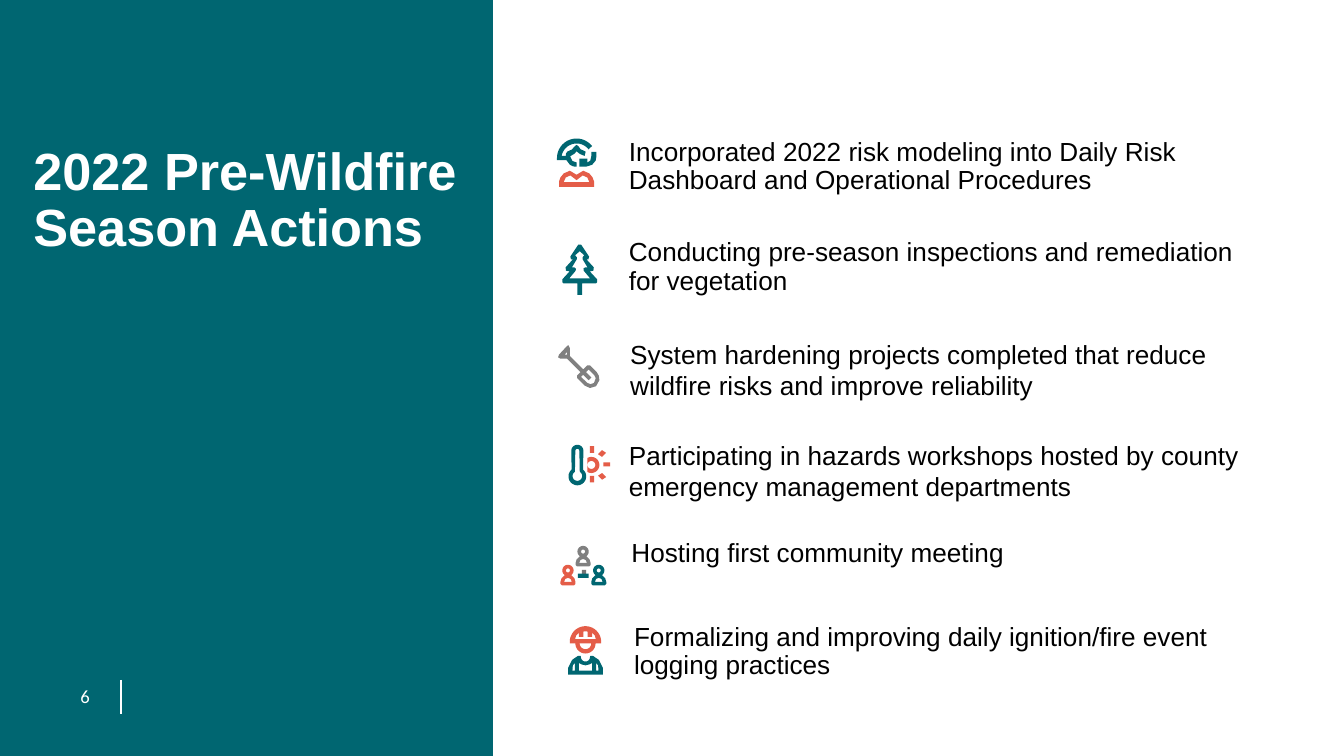
from math import cos, radians, sin

from lxml.etree import SubElement
from pptx import Presentation
from pptx.dml.color import RGBColor as RGB
from pptx.enum.shapes import MSO_CONNECTOR as LINE, MSO_SHAPE as KIND
from pptx.oxml.ns import qn
from pptx.util import Pt

HUES = {
    "teal": "006671", "coral": "E45D48", "gray": "808080",
    "stone": "767576", "white": "FFFFFF", "black": "000000",
}
UNIT = 0.72

TITLE = ("2022 Pre-Wildfire Season Actions", 10.8, 74.2, 257.8, 146.2, 0.9)
PAGE = ("6", 36, 363.6, 30.2, 19.4, 1)
ACTIONS = [
    ("Incorporated 2022 risk modeling into Daily Risk Dashboard and Operational Procedures",
     329.8, 70.6, 370, 46.8, 0.9),
    ("Conducting pre-season inspections and remediation for vegetation",
     329.8, 124.6, 344.2, 44.6, 0.9),
    ("System hardening projects completed that reduce wildfire risks and improve reliability",
     330.5, 177.8, 363.6, 41, 1),
    ("Participating in hazards workshops hosted by county emergency management departments",
     329.8, 231.8, 383.8, 41, 1),
    ("Hosting first community meeting", 331.2, 283.7, 383.8, 23.8, 1),
    ("Formalizing and improving daily ignition/fire event logging practices",
     332.6, 330.5, 357.8, 39.6, 0.9),
]


def arc(x, y, r, start, end, steps=16):
    turns = [radians(start + (end - start) * i / steps) for i in range(steps + 1)]
    return [(x + r * cos(t), y + r * sin(t)) for t in turns]


def flip(half):
    return [(-x, y) for x, y in reversed(half)]


def both(half):
    return half + flip(half)


HAIR = [
    [(0, 21), (0, 17.8), (-3, 16.8), (-4.8, 13.3), (-1.5, 11.3), (0, 9.5),
     (2.4, 11.5), (6, 13), (6.8, 9.8), (3, 8), (1.3, 5.6), (0, 4.8),
     (-1.2, 5.6), (-3.5, 8.2), (-7, 9.8), (-8, 11.5), (-8, 13), (-11, 13)]
    + arc(0, 15, 11.3, 190, 322) + arc(0, 14.6, 14.6, -38, -180)
    + [(-14.6, 16), (-7.6, 16), (-5, 19.5), (-2.5, 20.8)],
]
PHONE = [
    [(11, 10), (11, 13), (10.2, 16.4), (8, 18), (8, 15), (2, 15), (2, 21),
     (7, 21), (11.5, 19.6), (14.2, 16.5), (14.8, 13), (14.8, 10)],
]
BUST = [
    both([(0, 27), (5, 24), (9.5, 26), (12, 29), (13, 32), (13, 36)]),
    both([(0, 31), (4.6, 27.5), (8, 29), (9.6, 32.5)]),
]
TREE = [
    both([(1, 0), (7, 9), (6.5, 11), (5, 11), (10.5, 17), (10.2, 19.5),
          (7.5, 20), (13, 26), (13, 28), (12, 29), (1.8, 29), (1.8, 37.5)]),
    both([(0, 5), (3.4, 8), (2.2, 9.5), (2.2, 11), (5.8, 17), (4, 17),
          (2.8, 18), (3, 19.5), (7.8, 25.2)]),
]
SPADE = [
    [(29, 20), (24, 15), (22, 15), (19, 18), (9, 8), (9, 2), (8, 0), (7, 0.5),
     (1, 7), (0.3, 9), (2, 10), (7, 10), (17, 20), (14.5, 22.5), (14.5, 24.5),
     (20, 30), (24, 31.8), (28.5, 30.5), (31, 26), (30.5, 22.5)],
    [(7, 7), (5, 7), (7, 5)],
    [(27, 28), (24.5, 29), (22, 28), (17.3, 23.5), (19, 22), (23, 26),
     (25, 24), (21, 20), (23, 18), (27, 22), (28.3, 24.5)],
]
GAUGE = [
    both(arc(0, 4.5, 4.5, -90, 0) + arc(0, 23.5, 6.6, -50, 90)),
    both(arc(0, 4.5, 1.5, -90, 0) + arc(0, 23.2, 3.6, -60, 90)),
]
SUN = [arc(0, 0, 6, -120, 120) + arc(0, 0, 3, 180, -180)]
RAY = [(11, -9), (8, -11), (5, -8), (8, -6)]
LOW = [(x, -y) for x, y in RAY]
HEAD = [
    both(arc(0, 4.5, 4.2, -90, 50)
         + [(2.4, 8), (4.8, 10.3), (5.6, 13), (5.6, 14.5), (4.6, 15.5)]),
    both(arc(0, 4.5, 1.5, -90, 90)),
    both([(0, 10), (2, 10.8), (2.9, 13)]),
]
HAT = [
    both(arc(0, 11.7, 11.7, -90, 0) + [(11.7, 12.8)] + arc(0, 12.8, 7.5, 0, 90)),
    both(arc(0, 12.8, 4.3, 0, 90)),
    both([(0, 3.8), (1.6, 4), (1.6, 8), (4.9, 8), (4.9, 4.8), (7, 7), (7.7, 9.6)]),
]
SLEEVE = [(7.9, 5.2), (9.4, 7), (9.7, 11), (7.9, 11)]
COAT = [
    both(arc(0, 0.8, 3.4, 90, 0) + [(3.6, 0), (5.6, 0), (10, 3), (13, 9), (13, 14)]),
    both([(0, 7), (2.8, 6.4), (4.9, 5.3), (4.9, 11)]),
    SLEEVE, flip(SLEEVE),
]

ICONS = [
    [("teal", 308.9, 74.2, HAIR), ("teal", 308.9, 74.2, PHONE),
     ("coral", 308.9, 74.2, BUST)],
    [("teal", 310.6, 131, TREE)],
    [("gray", 298.8, 185, SPADE)],
    [("teal", 309.3, 238.3, GAUGE), ("coral", 316.8, 249.1, SUN),
     ("coral", 316.8, 249.1, [RAY]), ("coral", 316.8, 249.1, [LOW]),
     ("coral", 316.1, 239, (2.2, 3.6)), ("coral", 323.3, 247.7, (3.6, 2.2)),
     ("coral", 316.1, 254.9, (2.2, 3.6))],
    [("stone", 311.8, 305.3, (2.2, 2.2)), ("teal", 309.6, 307.4, (5.8, 2.2)),
     ("gray", 312.4, 292.3, HEAD), ("teal", 320.8, 302.4, HEAD),
     ("coral", 304.3, 302.4, HEAD)],
    [("coral", 313.7, 335.5, HAT), ("teal", 313.7, 351.4, COAT)],
]


def tint(hue):
    return RGB.from_string(HUES[hue])


def paint(shape, hue):
    shape.shadow.inherit = False
    shape.fill.solid()
    shape.fill.fore_color.rgb = tint(hue)
    shape.line.fill.background()


def block(home, hue, x, y, w, h):
    paint(home.add_shape(KIND.RECTANGLE, Pt(x), Pt(y), Pt(w), Pt(h)), hue)


def trace(home, hue, x, y, loops):
    first, *rest = [[(Pt(UNIT * a), Pt(UNIT * b)) for a, b in loop] for loop in loops]
    pen = home.build_freeform(*first[0])
    pen.add_line_segments(first[1:])
    for loop in rest:
        pen.move_to(*loop[0])
        pen.add_line_segments(loop[1:])
    paint(pen.convert_to_shape(Pt(x), Pt(y)), hue)


def write(home, item, size, hue, face="Arial", bold=False):
    text, x, y, w, h, gap = item
    frame = home.add_textbox(Pt(x), Pt(y), Pt(w), Pt(h)).text_frame
    frame.word_wrap = True
    frame.text = text
    para = frame.paragraphs[0]
    para.line_spacing = gap
    font = para.runs[0].font
    font.name, font.size, font.bold = face, Pt(size), bold
    font.color.rgb = tint(hue)


deck = Presentation()
deck.slide_width, deck.slide_height = Pt(720), Pt(405)
slide = deck.slides.add_slide(deck.slide_layouts[6])
slide.background.fill.solid()
slide.background.fill.fore_color.rgb = tint("teal")
shapes = slide.shapes

block(shapes, "white", 264.2, 0, 455.8, 405)
write(shapes, PAGE, 10, "white", "Calibri")
rule = shapes.add_connector(LINE.STRAIGHT, Pt(64.8), Pt(364.3), Pt(64.8), Pt(382.3))
rule.line.color.rgb = tint("white")
rule.line.width = Pt(0.75)
SubElement(rule._element.spPr, qn("a:effectLst"))
write(shapes, TITLE, 28, "white", bold=True)

for icon in ICONS:
    home = shapes.add_group_shape().shapes if len(icon) > 1 else shapes
    for hue, x, y, form in icon:
        if isinstance(form, tuple):
            block(home, hue, x, y, *form)
        else:
            trace(home, hue, x, y, form)

for item in ACTIONS:
    write(shapes, item, 14, "black")

deck.save("out.pptx")
